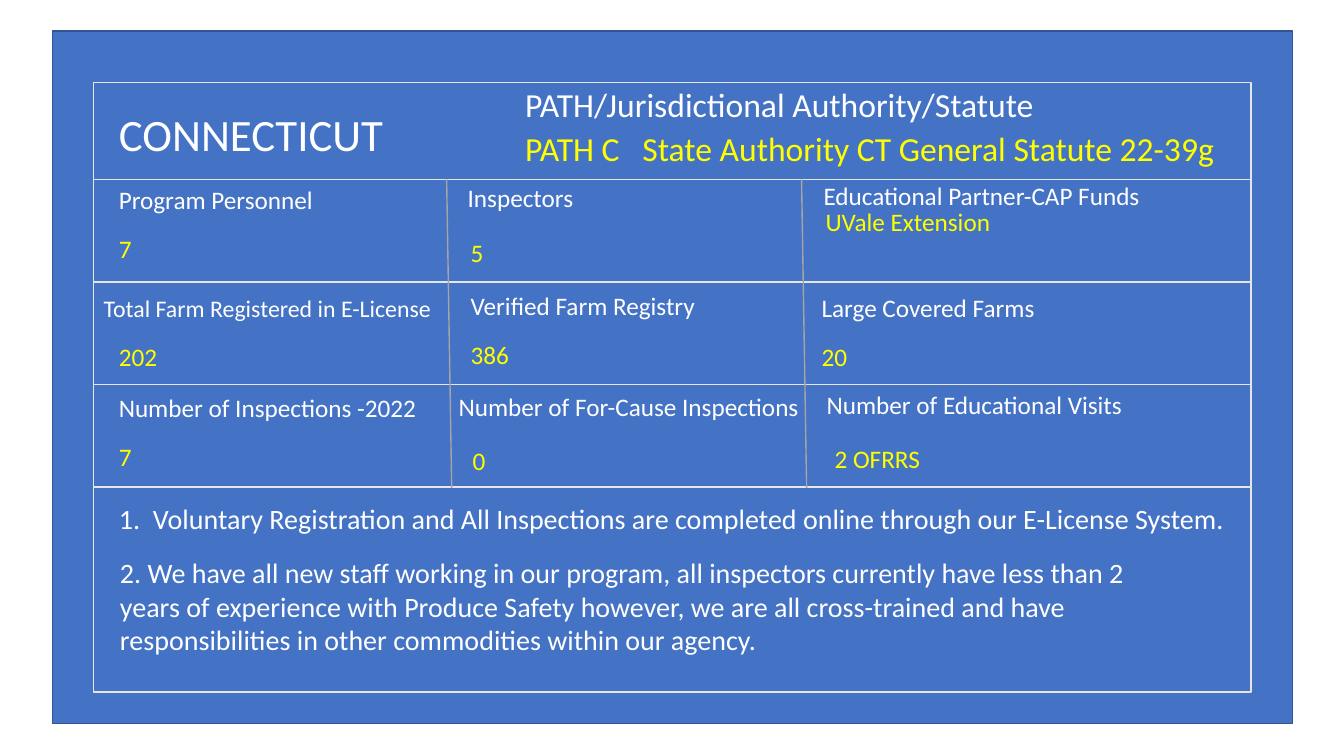
from pptx import Presentation, util as u
from pptx.dml.color import RGBColor
from pptx.enum import shapes, text
from pptx.oxml import parse_xml
from pptx.oxml.ns import nsdecls

BLUE, WHITE, YELLOW = "4472C4", "FFFFFF", "FFFF00"
LEFT, WIDTH = 0.93, 11.48
GRID_TOP, ROW = 1.78, 1.017
CELL_W = 4.67

prs = Presentation()
prs.slide_width, prs.slide_height = u.Inches(13.33), u.Inches(7.5)
slide = prs.slides.add_slide(prs.slide_layouts.get_by_name("Two Content"))
title, first_note, second_note = slide.placeholders


def paint(color_format, value):
    color_format.rgb = RGBColor.from_string(value)


def write(box, place, words, size, color=WHITE):
    box.left, box.top, box.width, box.height = [u.Inches(n) for n in place]
    frame = box.text_frame
    frame.text = words
    frame.word_wrap = True
    frame.auto_size = text.MSO_AUTO_SIZE.NONE
    frame.vertical_anchor = text.MSO_ANCHOR.TOP
    line = frame.paragraphs[0]
    line.alignment = text.PP_ALIGN.LEFT
    line.space_before = u.Pt(0)
    line.font.name, line.font.size = "Calibri", u.Pt(size)
    paint(line.font.color, color)


# Panel, header band, three rows and the notes band
bands = [(0.52, 0.31, 12.3, 6.87, "325491"),
         (LEFT, 0.82, WIDTH, GRID_TOP - 0.82, "E7E6E6")]
bands += [(LEFT, GRID_TOP + i * ROW, WIDTH, ROW, "E7E6E6") for i in range(3)]
bands.append((LEFT, GRID_TOP + 3 * ROW, WIDTH, 2 * ROW, "E7E6E6"))
for *place, edge in bands:
    band = slide.shapes.add_shape(shapes.MSO_SHAPE.RECTANGLE,
                                  *[u.Inches(n) for n in place])
    band.shadow.inherit = False
    band.fill.solid()
    paint(band.fill.fore_color, BLUE)
    paint(band.line.color, edge)
    band.line.width = u.Pt(1)

# Column dividers, leaning slightly to the right
for x in (4.43, 7.95):
    divider = slide.shapes.add_connector(
        shapes.MSO_CONNECTOR.STRAIGHT, u.Inches(x), u.Inches(GRID_TOP),
        u.Inches(x + 0.05), u.Inches(4.84))
    paint(divider.line.color, "A5A5A5")
    divider.line.width = u.Pt(1)
    divider.element.spPr.append(parse_xml(f"<a:effectLst {nsdecls('a')}/>"))

# State name and notes, brought in front of the bands
write(title, (1.08, 1.01, 4.87, 0.64), "CONNECTICUT", 32)
write(first_note, (1.08, 4.93, 11.63, 0.44),
      "1.  Voluntary Registration and All Inspections are completed online "
      "through our E-License System.", 20)
write(second_note, (1.09, 5.46, 10.62, 1.11),
      "2. We have all new staff working in our program, all inspectors "
      "currently have less than 2 years of experience with Produce Safety "
      "however, we are all cross-trained and have responsibilities in other "
      "commodities within our agency.", 20)
for holder in (title, first_note, second_note):
    slide.shapes.element.append(holder.element)
for note in (first_note, second_note):
    layout = note.text_frame.paragraphs[0]._p.get_or_add_pPr()
    layout.set("marL", "0")
    layout.set("indent", "0")
    layout.append(parse_xml(f"<a:buNone {nsdecls('a')}/>"))

# Authority and the figures: left, top, words, size, colour
entries = [
    (5.11, 0.78, "PATH/Jurisdictional Authority/Statute", 24, WHITE),
    (5.11, 1.22, "PATH C   State Authority CT General Statute 22-39g", 24, YELLOW),
]
# Each figure: label, its left and top, value, its left and top
figures = [
    ("Program Personnel", 1.08, 1.78, "7", 1.08, 2.27),
    ("Inspectors", 4.54, 1.76, "5", 4.57, 2.3),
    ("Educational Partner-CAP Funds", 8.07, 1.74, "UVale Extension", 8.09, 2),
    ("Total Farm Registered in E-License", 0.93, 2.86, "202", 1.08, 3.34),
    ("Verified Farm Registry", 4.57, 2.83, "386", 4.57, 3.32),
    ("Large Covered Farms", 8.05, 2.85, "20", 8.05, 3.34),
    ("Number of Inspections -2022", 1.08, 3.84, "7", 1.08, 4.33),
    ("Number of For-Cause Inspections", 4.45, 3.83, "0", 4.59, 4.37),
    ("Number of Educational Visits", 8.1, 3.81, "2 OFRRS", 8.18, 4.35),
]
for label, label_x, label_y, value, value_x, value_y in figures:
    label_size = 17 if label.startswith("Total") else 18
    entries += [(label_x, label_y, label, label_size, WHITE),
                (value_x, value_y, value, 18, YELLOW)]
for x, y, words, size, color in entries:
    place = (x, y, 7.13, 0.5) if size == 24 else (x, y, CELL_W, 0.42)
    write(slide.shapes.add_textbox(0, 0, 0, 0), place, words, size, color)

prs.save("out.pptx")
